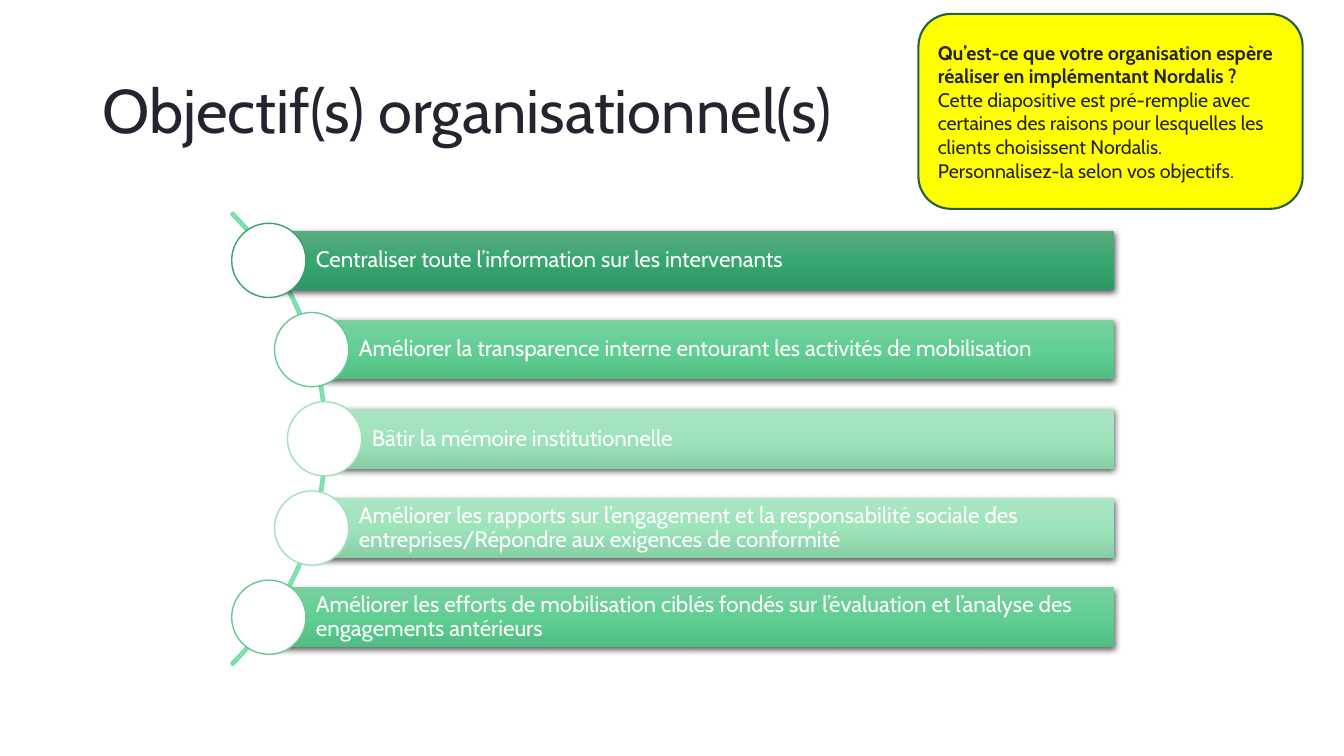
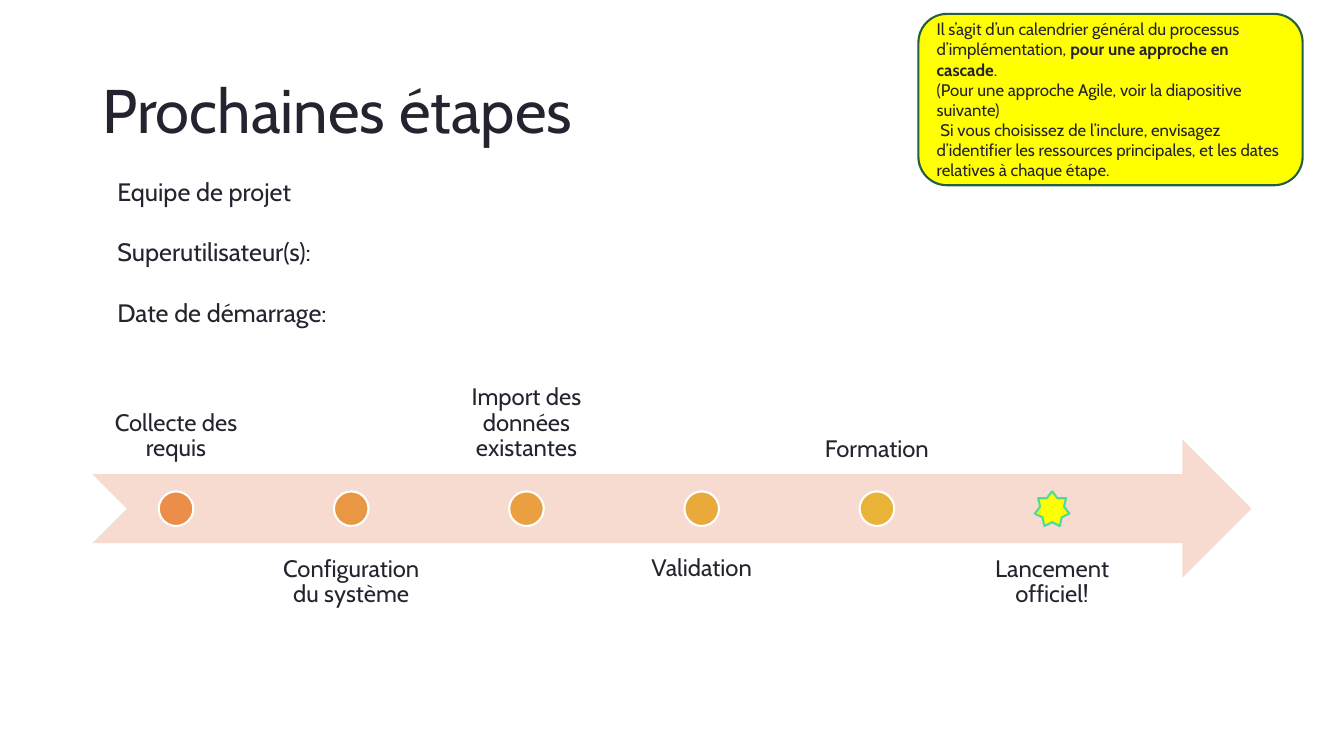
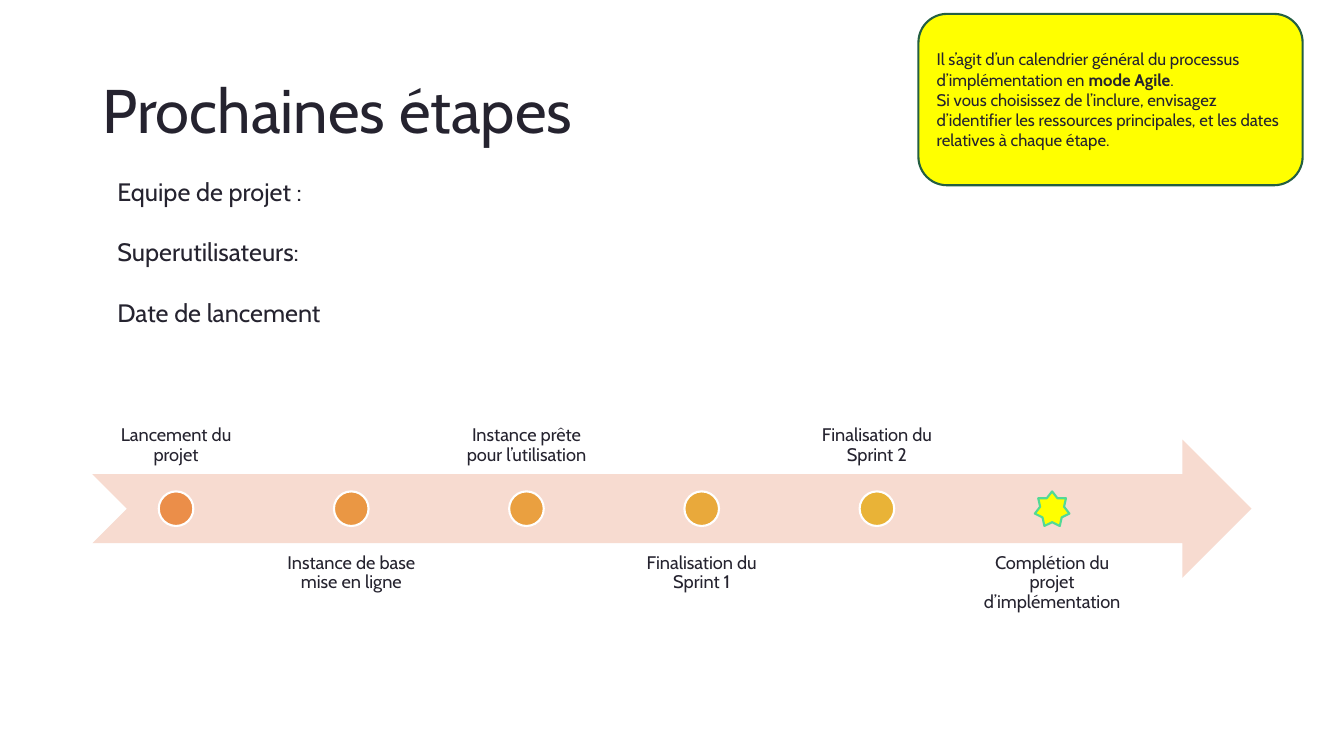
from copy import deepcopy

from lxml import etree
from pptx import Presentation
from pptx.dml.color import RGBColor
from pptx.enum.shapes import MSO_SHAPE
from pptx.enum.text import MSO_ANCHOR, PP_ALIGN
from pptx.oxml.ns import qn
from pptx.util import Emu, Pt

RECT, ROUNDED, OVAL = MSO_SHAPE.RECTANGLE, MSO_SHAPE.ROUNDED_RECTANGLE, MSO_SHAPE.OVAL
ARC, ARROW, STAR = MSO_SHAPE.BLOCK_ARC, MSO_SHAPE.NOTCHED_RIGHT_ARROW, MSO_SHAPE.STAR_7_POINT
TOP, MIDDLE, BOTTOM = MSO_ANCHOR.TOP, MSO_ANCHOR.MIDDLE, MSO_ANCHOR.BOTTOM
LEFT, CENTER = PP_ALIGN.LEFT, PP_ALIGN.CENTER

# Square grid: every length below is a number of cells
COLUMNS, ROWS, CELL = 80, 45, 152400

FONT = "Cabin"
INK = RGBColor(0x25, 0x23, 0x2F)
WHITE = RGBColor(0xFF, 0xFF, 0xFF)
YELLOW = RGBColor(0xFF, 0xFF, 0x00)
NOTE_LINE = RGBColor(0x24, 0x5F, 0x42)
ARC_LINE = RGBColor(0x75, 0xDD, 0xA5)
STAR_LINE = RGBColor(0x52, 0xD9, 0x96)
ARROW_FILL = RGBColor(0xF7, 0xDB, 0xD0)
DOT_FILLS = [RGBColor(0xEB, 0x8E, 0x49), RGBColor(0xEA, 0x97, 0x44), RGBColor(0xEA, 0xA0, 0x40),
             RGBColor(0xE9, 0xA9, 0x3B), RGBColor(0xE9, 0xB3, 0x37)]

# Three gradient stops of a bar, then the outline of its circle
DARK = (RGBColor(0x5B, 0xAC, 0x80), RGBColor(0x38, 0xA6, 0x6F),
        RGBColor(0x2D, 0x98, 0x63), RGBColor(0x3D, 0xA1, 0x6F))
MEDIUM = (RGBColor(0x79, 0xD0, 0xA0), RGBColor(0x61, 0xCF, 0x93),
          RGBColor(0x50, 0xBD, 0x82), RGBColor(0x66, 0xCA, 0x94))
LIGHT = (RGBColor(0xAC, 0xE5, 0xC4), RGBColor(0x9D, 0xE4, 0xBB),
         RGBColor(0x87, 0xCF, 0xA5), RGBColor(0xA0, 0xE1, 0xBB))


def cells(*counts):
    return [Emu(round(n * CELL)) for n in counts]


class Deck:
    def __init__(self):
        self.prs = Presentation()
        self.prs.slide_width, self.prs.slide_height = cells(COLUMNS, ROWS)
        self.slide = None

    def new_slide(self, title):
        self.slide = self.prs.slides.add_slide(self.prs.slide_layouts[6])
        self.text_box(5.5, 2.4, 69, 8.7, [title], 44, anchor=MIDDLE, spacing=0.9)

    def set_text(self, sp, paragraphs, size, color=INK, anchor=TOP, align=LEFT,
                 spacing=1.0, after=0, insets=None):
        """Fill a shape with paragraphs; text between ** marks is bold."""
        tf = sp.text_frame
        tf.word_wrap, tf.vertical_anchor = True, anchor
        if insets:
            tf.margin_left, tf.margin_top, tf.margin_right, tf.margin_bottom = cells(*insets)
        tf.text = "\n".join(paragraphs)
        for p in tf.paragraphs:
            parts = p.text.split("**")
            p.text = ""
            p.alignment, p.line_spacing, p.space_after = align, spacing, Pt(after)
            for i, part in enumerate(parts):
                if part:
                    r = p.add_run()
                    r.text = part
                    r.font.name, r.font.size, r.font.bold = FONT, Pt(size), i % 2 == 1
                    r.font.color.rgb = color

    def text_box(self, x, y, w, h, paragraphs, size, **style):
        sp = self.slide.shapes.add_textbox(*cells(x, y, w, h))
        self.set_text(sp, paragraphs, size, **style)

    def shape(self, kind, x, y, w, h, fill=None, line=None, width=1.5):
        sp = self.slide.shapes.add_shape(kind, *cells(x, y, w, h))
        sp.shadow.inherit = False
        if fill is None:
            sp.fill.background()
        else:
            sp.fill.solid()
            sp.fill.fore_color.rgb = fill
        if line is None:
            sp.line.fill.background()
        else:
            sp.line.color.rgb, sp.line.width = line, Pt(width)
        return sp

    def marker(self, kind, cx, cy, size, fill, line, width=1.5):
        """Draw a square-framed shape around a centre."""
        return self.shape(kind, cx - size / 2, cy - size / 2, size, size, fill, line, width)

    def note(self, height, paragraphs, size):
        sp = self.shape(ROUNDED, 54.67, 0.83, 22.87, height, YELLOW, NOTE_LINE)
        self.set_text(sp, paragraphs, size, anchor=MIDDLE)

    def gradient(self, sp, colors):
        sp.fill.gradient()
        sp.fill.gradient_angle = 270
        stops = sp._element.spPr.find(".//" + qn("a:gsLst"))
        stops.append(deepcopy(stops[-1]))
        for stop, color, position in zip(sp.fill.gradient_stops, colors, (0, 0.5, 1)):
            stop.color.rgb, stop.position = color, position

    def drop_shadow(self, sp):
        effects = sp._element.spPr.find(qn("a:effectLst"))
        shadow = etree.SubElement(effects, qn("a:outerShdw"), blurRad=str(Pt(4.5)),
                                  dist=str(Pt(1.5)), dir="5400000", rotWithShape="0")
        color = etree.SubElement(shadow, qn("a:srgbClr"), val="000000")
        etree.SubElement(color, qn("a:alpha"), val="63000")

    def curved_list(self, items):
        """Draw bars whose circles follow an arc; items are (left, palette, text)."""
        first, pitch, height, right = 15.5, 5.31, 3.54, 66.3
        arc = self.marker(ARC, 0.39, first + 2 * pitch, 38.1, None, ARC_LINE)
        for i, value in enumerate((189, 27, 0.004)):
            arc.adjustments[i] = value
        for i, (left, palette, text) in enumerate(items):
            cy = first + i * pitch
            bar = self.shape(RECT, left, cy - height / 2, right - left, height)
            self.gradient(bar, palette[:3])
            self.drop_shadow(bar)
            self.set_text(bar, [text], 16, WHITE, MIDDLE, spacing=0.9,
                          insets=(2.81, 0.27, 0.27, 0.27))
            self.marker(OVAL, left, cy, 4.42, WHITE, palette[3], 1)

    def timeline(self, steps, size, inset):
        """Draw an arrow with labels in turn above and below; a star ends it."""
        height, width, pitch, cy = 8.23, 9.96, 10.43, 30.28
        self.shape(ARROW, 5.5, cy - height / 2, 69, height, ARROW_FILL)
        for i, step in enumerate(steps):
            x = 5.5 + i * pitch
            y, anchor = (32.35, TOP) if i % 2 else (20.05, BOTTOM)
            self.text_box(x, y, width, height, [step], size, anchor=anchor, align=CENTER,
                          spacing=0.9, insets=[inset] * 4)
            if i < len(DOT_FILLS):
                kind, fill, line = OVAL, DOT_FILLS[i], WHITE
            else:
                kind, fill, line = STAR, YELLOW, STAR_LINE
            self.marker(kind, x + width / 2, cy, 2.06, fill, line)

    def next_steps(self, facts, steps, size, inset, note):
        self.new_slide("Prochaines étapes")
        self.timeline(steps, size, inset)
        self.note(10.2, note, 12)
        self.text_box(6.4, 10.2, 46.7, 9.7, facts, 18, after=21.6)


def main():
    deck = Deck()

    deck.new_slide("Objectif(s) organisationnel(s)")
    deck.note(11.6, [
        "**Qu’est-ce que votre organisation espère réaliser en implémentant Nordalis ?**",
        "Cette diapositive est pré-remplie avec certaines des raisons pour lesquelles les "
        "clients choisissent Nordalis.",
        "Personnalisez-la selon vos objectifs."], 14)
    deck.curved_list([
        (16, DARK, "Centraliser toute l’information sur les intervenants"),
        (18.55, MEDIUM, "Améliorer la transparence interne entourant les activités de mobilisation"),
        (19.32, LIGHT, "Bâtir la mémoire institutionnelle"),
        (18.55, LIGHT, "Améliorer les rapports sur l’engagement et la responsabilité sociale des "
                       "entreprises/Répondre aux exigences de conformité"),
        (16, MEDIUM, "Améliorer les efforts de mobilisation ciblés fondés sur l’évaluation et "
                     "l’analyse des engagements antérieurs")])

    deck.next_steps(
        ["Equipe de projet", "Superutilisateur(s):", "Date de démarrage:"],
        ["Collecte des requis", "Configuration du système", "Import des données existantes",
         "Validation", "Formation", "Lancement officiel!"], 17, 0.78,
        ["Il s’agit d’un calendrier général du processus d’implémentation, "
         "**pour une approche en cascade**.",
         "(Pour une approche Agile, voir la diapositive suivante)",
         " Si vous choisissez de l’inclure, envisagez d’identifier les ressources principales, "
         "et les dates relatives à chaque étape."])

    deck.next_steps(
        ["Equipe de projet :", "Superutilisateurs:", "Date de lancement"],
        ["Lancement du projet", "Instance de base mise en ligne",
         "Instance prête pour l’utilisation", "Finalisation du Sprint 1",
         "Finalisation du Sprint 2", "Complétion du projet d’implémentation"], 13, 0.6,
        ["Il s’agit d’un calendrier général du processus d’implémentation en **mode Agile**.",
         "Si vous choisissez de l’inclure, envisagez d’identifier les ressources principales, "
         "et les dates relatives à chaque étape."])

    deck.prs.save("out.pptx")


if __name__ == "__main__":
    main()
